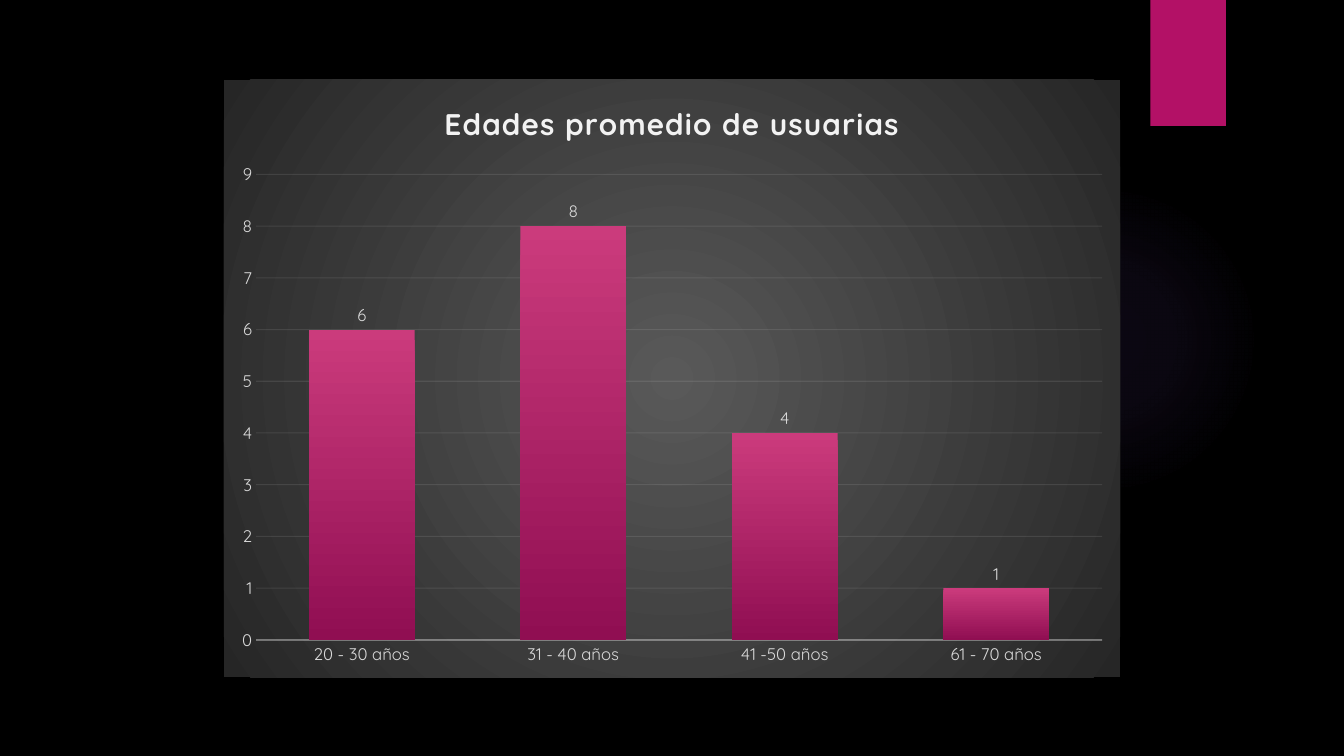
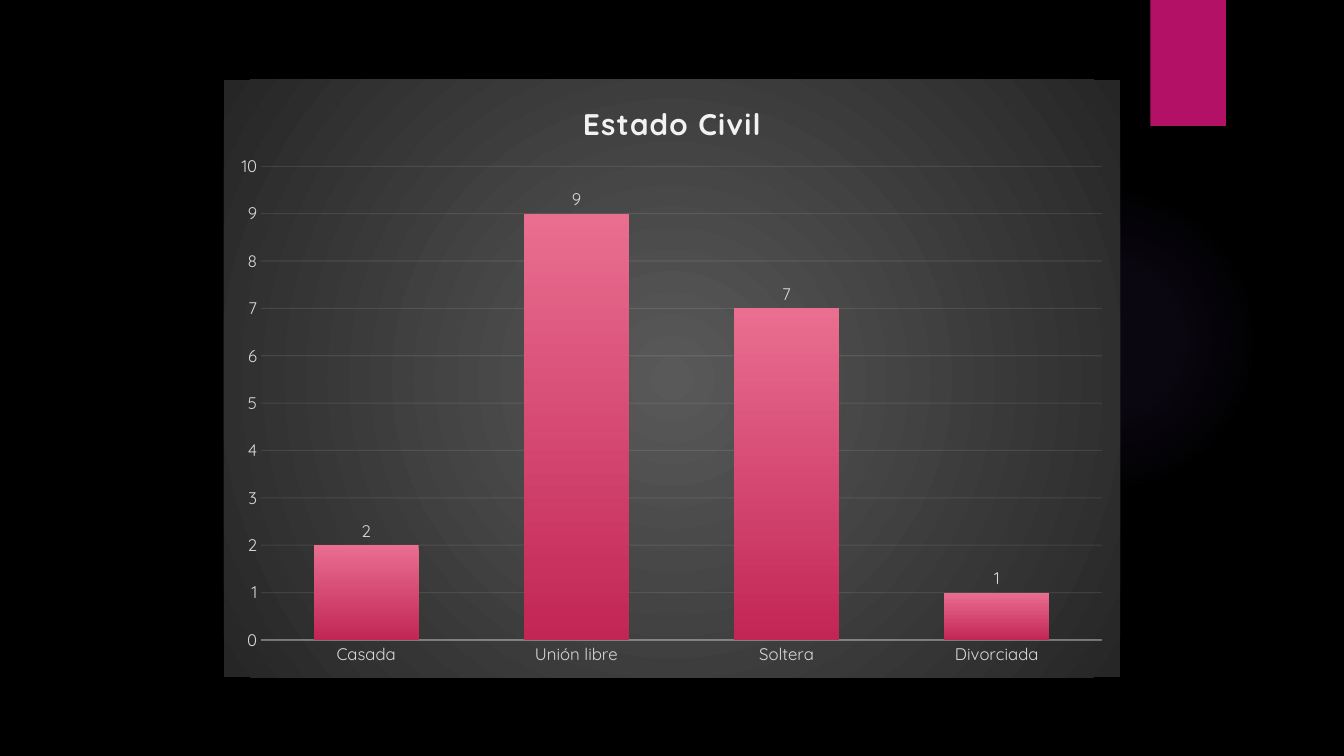
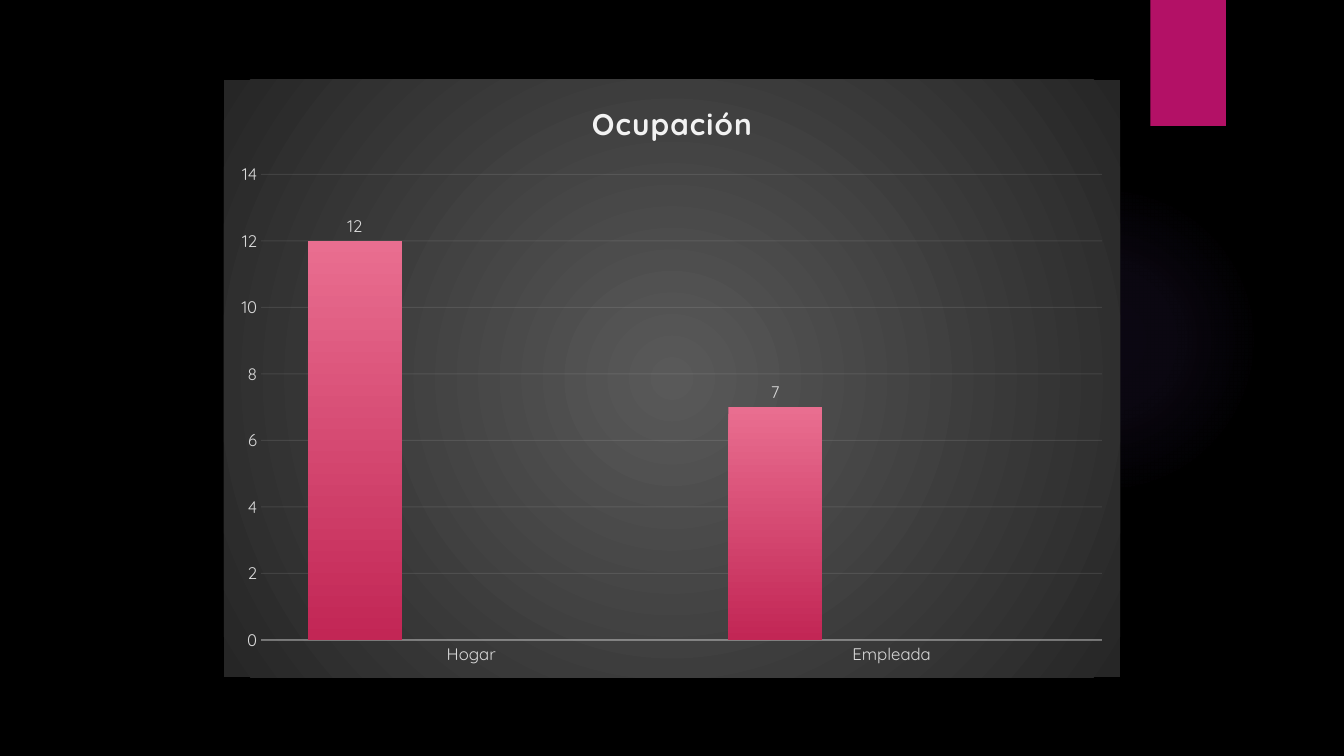
"""Build three survey slides, each with one column chart on a dark panel."""
from dataclasses import dataclass

from pptx import Presentation
from pptx.chart.data import CategoryChartData
from pptx.dml.color import RGBColor
from pptx.enum.chart import XL_CHART_TYPE, XL_LABEL_POSITION, XL_TICK_MARK
from pptx.enum.shapes import MSO_SHAPE
from pptx.oxml import parse_xml
from pptx.oxml.ns import nsdecls, qn
from pptx.util import Inches, Pt


@dataclass(frozen=True)
class Theme:
    font: str = "Quicksand"
    bg: str = "000000"
    accent: str = "B31166"
    glow: str = "9B6BF2"
    title: str = "F2F2F2"
    text: str = "FFFFFF"
    label: str = "D9D9D9"
    line: str = "F2F2F2"
    panel: tuple = ("595959", "262626")
    magenta: tuple = ("CB3B7C", "900E52")
    rose: tuple = ("E96E90", "C22655")
    orange: tuple = ("EEAD6D", "C97721")
    violet: tuple = ("DD6AD9", "AE2EAA")
    title_size: float = 21.3
    label_size: int = 12
    base_size: int = 10


THEME = Theme()
LINEAR = '<a:lin ang="5400000" scaled="0"/>'
RADIAL = ('<a:path path="circle"><a:fillToRect l="50000" t="50000" '
          'r="50000" b="50000"/></a:path>')
PANEL = (2.22, 0.79, 8.89, 5.93)
PLOT_RIGHT, PLOT_BOTTOM = 8.71, 5.56


def set_font(font, size, color, bold=False):
    font.name, font.size, font.bold = THEME.font, Pt(size), bold
    font.color.rgb = RGBColor.from_string(color)


def write(tf, text, *, size, color, bold=False, spacing=0):
    r = tf.paragraphs[0].add_run()
    r.text = text
    set_font(r.font, size, color, bold)
    r.font._element.set("spc", str(spacing))


def add_gradient(sp_pr, stops, shade):
    gs = "".join(
        f'<a:gs pos="{pos * 1000}"><a:srgbClr val="{color}">'
        f'<a:alpha val="{alpha * 1000}"/></a:srgbClr></a:gs>'
        for pos, color, alpha in stops)
    sp_pr.append(parse_xml(
        f'<a:gradFill {nsdecls("a")} rotWithShape="1">'
        f'<a:gsLst>{gs}</a:gsLst>{shade}</a:gradFill>'))


def two_stops(colors):
    return [(0, colors[0], 100), (100, colors[1], 100)]


def set_line(line, width, parent, alpha):
    line.width = Pt(width)
    line.color.rgb = RGBColor.from_string(THEME.line)
    for clr in parent().iter(qn("a:srgbClr")):
        clr.append(parse_xml(
            f'<a:alpha {nsdecls("a")} val="{alpha * 1000}"/>'))


class Deck:
    def __init__(self):
        self.prs = Presentation()
        self.prs.slide_width = Inches(13.33)
        self.prs.slide_height = Inches(7.5)
        self.slide = None

    def new_slide(self):
        self.slide = self.prs.slides.add_slide(self.prs.slide_layouts[6])
        fill = self.slide.background.fill
        fill.solid()
        fill.fore_color.rgb = RGBColor.from_string(THEME.bg)
        glow = self.shape(MSO_SHAPE.OVAL, 9.41, 1.83, 3.08, 3.08)
        add_gradient(glow._element.spPr,
                     [(0, THEME.glow, 7), (36, THEME.glow, 6),
                      (69, THEME.glow, 0)], RADIAL)
        self.finish(glow)
        tab = self.shape(MSO_SHAPE.RECTANGLE, 11.41, 0, 0.75, 1.25)
        tab.fill.solid()
        tab.fill.fore_color.rgb = RGBColor.from_string(THEME.accent)
        self.finish(tab)

    def shape(self, kind, *box):
        return self.slide.shapes.add_shape(kind, *map(Inches, box))

    def finish(self, sp):
        sp.line.fill.background()
        sp.shadow.inherit = False

    def chart(self, title, cats, series, *, top, left, maximum, unit):
        data = CategoryChartData()
        data.categories = cats
        for i, (vals, _) in enumerate(series, 1):
            data.add_series(f"Series {i}", vals)
        chart = self.slide.shapes.add_chart(
            XL_CHART_TYPE.COLUMN_CLUSTERED, *map(Inches, PANEL), data).chart
        set_font(chart.font, THEME.base_size, THEME.text)
        chart.has_legend = False
        chart.has_title = True
        write(chart.chart_title.text_frame, title, size=THEME.title_size,
              color=THEME.title, bold=True, spacing=100)
        self.panel(chart)
        self.place_plot(chart, left, top)
        self.axes(chart, maximum, unit)
        self.columns(chart, [colors for _, colors in series])

    def panel(self, chart):
        sp_pr = parse_xml(f'<c:spPr {nsdecls("c", "a")}/>')
        add_gradient(sp_pr, two_stops(THEME.panel), RADIAL)
        sp_pr.append(parse_xml(f'<a:ln {nsdecls("a")}><a:noFill/></a:ln>'))
        chart._chartSpace.find(qn("c:chart")).addnext(sp_pr)

    def place_plot(self, chart, left, top):
        area = chart._chartSpace.find(qn("c:chart")).find(qn("c:plotArea"))
        for old in area.findall(qn("c:layout")):
            area.remove(old)
        width, height = PANEL[2:]
        parts = {"x": left / width, "y": top / height,
                 "w": (PLOT_RIGHT - left) / width,
                 "h": (PLOT_BOTTOM - top) / height}
        modes = '<c:xMode val="edge"/><c:yMode val="edge"/>'
        sizes = "".join(f'<c:{k} val="{v:.4f}"/>' for k, v in parts.items())
        area.insert(0, parse_xml(
            f'<c:layout {nsdecls("c")}><c:manualLayout>'
            f'<c:layoutTarget val="inner"/>{modes}{sizes}'
            f'</c:manualLayout></c:layout>'))

    def axes(self, chart, maximum, unit):
        cat, val = chart.category_axis, chart.value_axis
        for axis in (cat, val):
            axis.major_tick_mark = axis.minor_tick_mark = XL_TICK_MARK.NONE
            set_font(axis.tick_labels.font, THEME.label_size, THEME.label)
        set_line(cat.format.line, 1,
                 lambda: cat._element.find(qn("c:spPr")), 54)
        val.minimum_scale, val.maximum_scale = 0, maximum
        val.major_unit = unit
        val.format.line.fill.background()
        val.has_major_gridlines = True
        set_line(val.major_gridlines.format.line, 0.75,
                 lambda: val._element.find(qn("c:majorGridlines")), 10)

    def columns(self, chart, palette):
        plot = chart.plots[0]
        plot.gap_width, plot.overlap = 100, -24
        plot.vary_by_categories = False
        for ser, colors in zip(plot.series, palette):
            add_gradient(ser._element.get_or_add_spPr(),
                         two_stops(colors), LINEAR)
            labels = ser.data_labels
            labels.show_value = True
            labels.position = XL_LABEL_POSITION.OUTSIDE_END
            set_font(labels.font, THEME.label_size, THEME.label)


def main():
    deck = Deck()
    deck.new_slide()
    deck.chart("Edades promedio de usuarias",
               ["20 - 30 años", "31 - 40 años", "41 -50 años", "61 - 70 años"],
               [((6, 8, 4, 1), THEME.magenta)],
               top=0.94, left=0.32, maximum=9, unit=1)
    deck.new_slide()
    deck.chart("Estado Civil",
               ["Casada", "Unión libre", "Soltera", "Divorciada"],
               [((2, 9, 7, 1), THEME.rose)],
               top=0.86, left=0.37, maximum=10, unit=1)
    deck.new_slide()
    deck.chart("Ocupación", ["Hogar", "Empleada"],
               [((12, 7), THEME.rose), ((None, None), THEME.orange),
                ((None, None), THEME.violet)],
               top=0.94, left=0.37, maximum=14, unit=2)
    deck.prs.save("out.pptx")


if __name__ == "__main__":
    main()
